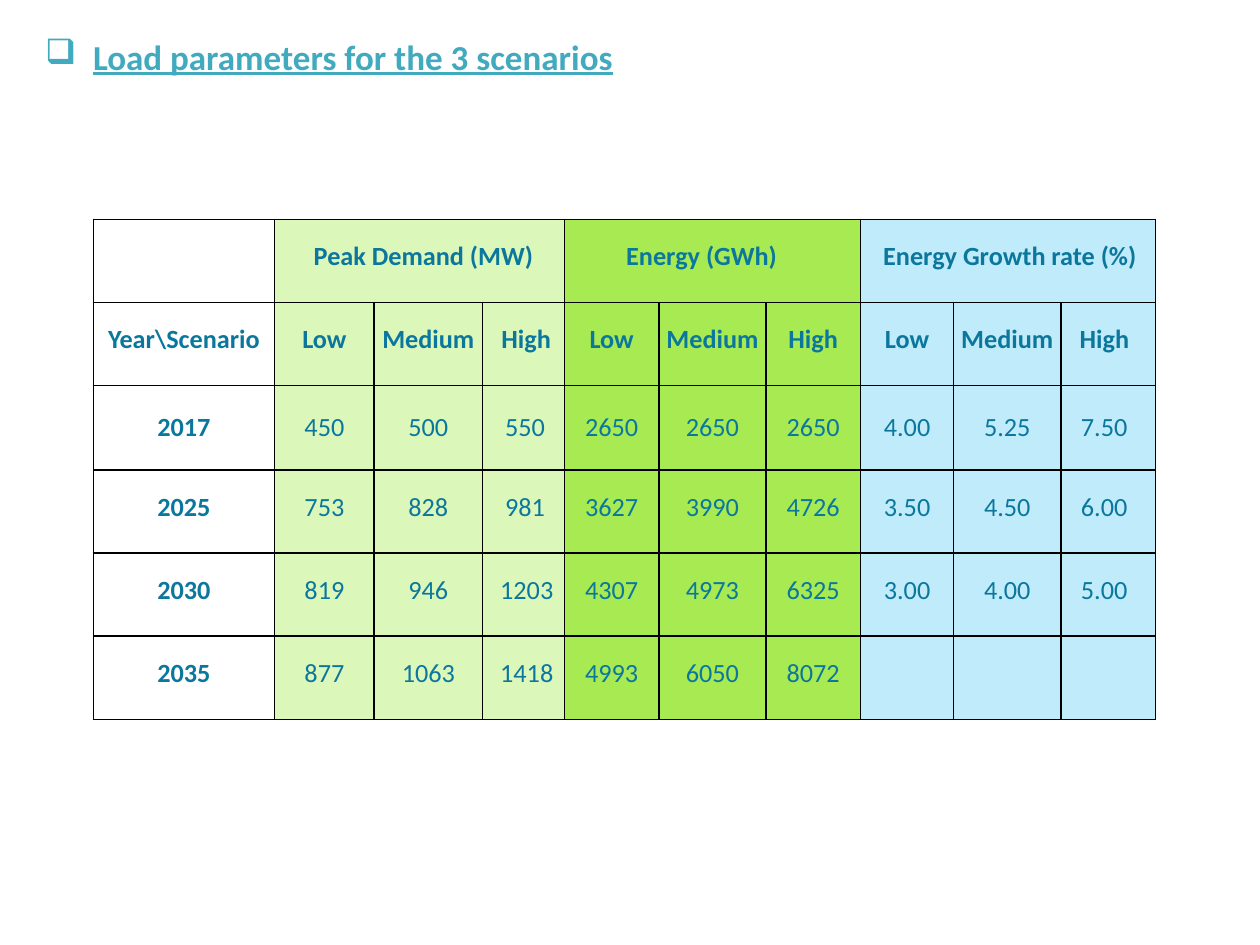
"""Build a slide with a table of load parameters for three scenarios."""
import pptx
import pptx.util
import pptx.dml.color
import pptx.enum.text
import pptx.oxml
import pptx.oxml.ns

TITLE = "Load parameters for the 3 scenarios"
FONT, TITLE_COLOUR, TEXT_COLOUR, BORDER = "Calibri", "41AABF", "0C779D", "000000"
YEAR_FILL = "FFFFFF"
GROUPS = [
    ("Peak Demand (MW)", "DCF7BA", 0.31),
    ("Energy (GWh)", "A7EA52", 0.49),
    ("Energy Growth rate (%)", "BFEBFA", 0.18),
]
LEVELS = ["Low", "Medium", "High"]
YEARS = [
    ["2017", "450", "500", "550", "2650", "2650", "2650", "4.00", "5.25", "7.50"],
    ["2025", "753", "828", "981", "3627", "3990", "4726", "3.50", "4.50", "6.00"],
    ["2030", "819", "946", "1203", "4307", "4973", "6325", "3.00", "4.00", "5.00"],
    ["2035", "877", "1063", "1418", "4993", "6050", "8072", "", "", ""],
]
COLUMN_WIDTHS = [1.44, 0.79, 0.86, 0.65, 0.75, 0.85, 0.75, 0.74, 0.85, 0.75]
ROW_HEIGHTS = [0.66, 0.66, 0.67, 0.66, 0.66, 0.66]
PEAK_HIGH, GROWTH_HIGH = 3, 9
PEAK_INDENTS = {"High": 0.15, 3: 0.18, 4: 0.14}
GROWTH_INDENTS = {"High": 0.15, 4: 0.16}

Inches, Pt = pptx.util.Inches, pptx.util.Pt
PP_ALIGN = pptx.enum.text.PP_ALIGN


def rgb(colour):
    return pptx.dml.color.RGBColor.from_string(colour)


def add_child(parent, tag, **attributes):
    child = pptx.oxml.parse_xml(f"<{tag} {pptx.oxml.ns.nsdecls('a')}/>")
    for name, value in attributes.items():
        child.set(name, str(value))
    parent.append(child)
    return child


def style_font(paragraph, size, colour, bold):
    font = paragraph.font
    font.name, font.size, font.bold = FONT, Pt(size), bold
    font.color.rgb = rgb(colour)


def set_indent(paragraph, left, first=0):
    properties = paragraph._p.get_or_add_pPr()
    properties.set("marL", str(Inches(left)))
    properties.set("indent", str(Inches(first)))
    return properties


def style_cell(cell, fill):
    properties = cell._tc.get_or_add_tcPr()
    for side in ("a:lnL", "a:lnR", "a:lnT", "a:lnB"):
        line = add_child(properties, side, w=Pt(1))
        add_child(add_child(line, "a:solidFill"), "a:srgbClr", val=BORDER)
    cell.fill.solid()
    cell.fill.fore_color.rgb = rgb(fill)
    cell.vertical_anchor = pptx.enum.text.MSO_ANCHOR.MIDDLE
    cell.margin_left = cell.margin_right = cell.margin_top = cell.margin_bottom = 0


def write_cell(cell, text, bold, indent=None, roomy=False):
    paragraph = cell.text_frame.paragraphs[0]
    paragraph.text = text
    if indent is None:
        paragraph.alignment = PP_ALIGN.CENTER
    else:
        paragraph.alignment = PP_ALIGN.LEFT
        set_indent(paragraph, indent)
    if roomy:
        paragraph.space_before = Pt(0.1)
    else:
        paragraph.line_spacing = Pt(13.3)
    style_font(paragraph, 15, TEXT_COLOUR, bold)


def find_indent(column, text):
    indents = {PEAK_HIGH: PEAK_INDENTS, GROWTH_HIGH: GROWTH_INDENTS}.get(column, {})
    return indents.get(text, indents.get(len(text.replace(".", "")) if "." not in text else 4))


def add_title(slide):
    box = slide.shapes.add_textbox(Inches(0.25), Inches(0.23), Inches(6.33), Inches(0.44))
    frame = box.text_frame
    frame.word_wrap = True
    frame.auto_size = pptx.enum.text.MSO_AUTO_SIZE.SHAPE_TO_FIT_TEXT
    heading = frame.paragraphs[0]
    heading.text = TITLE
    heading.space_before = Pt(10.8)
    add_child(set_indent(heading, 0.39, -0.38), "a:buChar", char="❑")
    style_font(heading, 20, TITLE_COLOUR, True)
    heading.font.underline = True


def add_load_table(slide):
    table = slide.shapes.add_table(
        len(ROW_HEIGHTS), len(COLUMN_WIDTHS), Inches(0.74), Inches(1.74),
        Inches(sum(COLUMN_WIDTHS)), Inches(sum(ROW_HEIGHTS))).table
    table.first_row = table.horz_banding = False
    for column, width in zip(table.columns, COLUMN_WIDTHS):
        column.width = Inches(width)
    for row, height in zip(table.rows, ROW_HEIGHTS):
        row.height = Inches(height)

    fills = [YEAR_FILL] + [fill for _, fill, _ in GROUPS for _ in LEVELS]
    for row in table.rows:
        for cell, fill in zip(row.cells, fills):
            style_cell(cell, fill)

    for group, (name, _, indent) in enumerate(GROUPS):
        first = 1 + group * len(LEVELS)
        table.cell(0, first).merge(table.cell(0, first + len(LEVELS) - 1))
        write_cell(table.cell(0, first), name, True, indent)

    body = [["Year\\Scenario"] + LEVELS * len(GROUPS)] + YEARS
    for row, entries in enumerate(body, start=1):
        for column, text in enumerate(entries):
            if text:
                write_cell(table.cell(row, column), text, row == 1 or column == 0,
                           find_indent(column, text), roomy=text and row == 2)


def main():
    deck = pptx.Presentation()
    deck.slide_width, deck.slide_height = Inches(10), Inches(7.5)
    slide = deck.slides.add_slide(deck.slide_layouts[6])
    add_load_table(slide)
    add_title(slide)
    deck.save("out.pptx")


if __name__ == "__main__":
    main()
